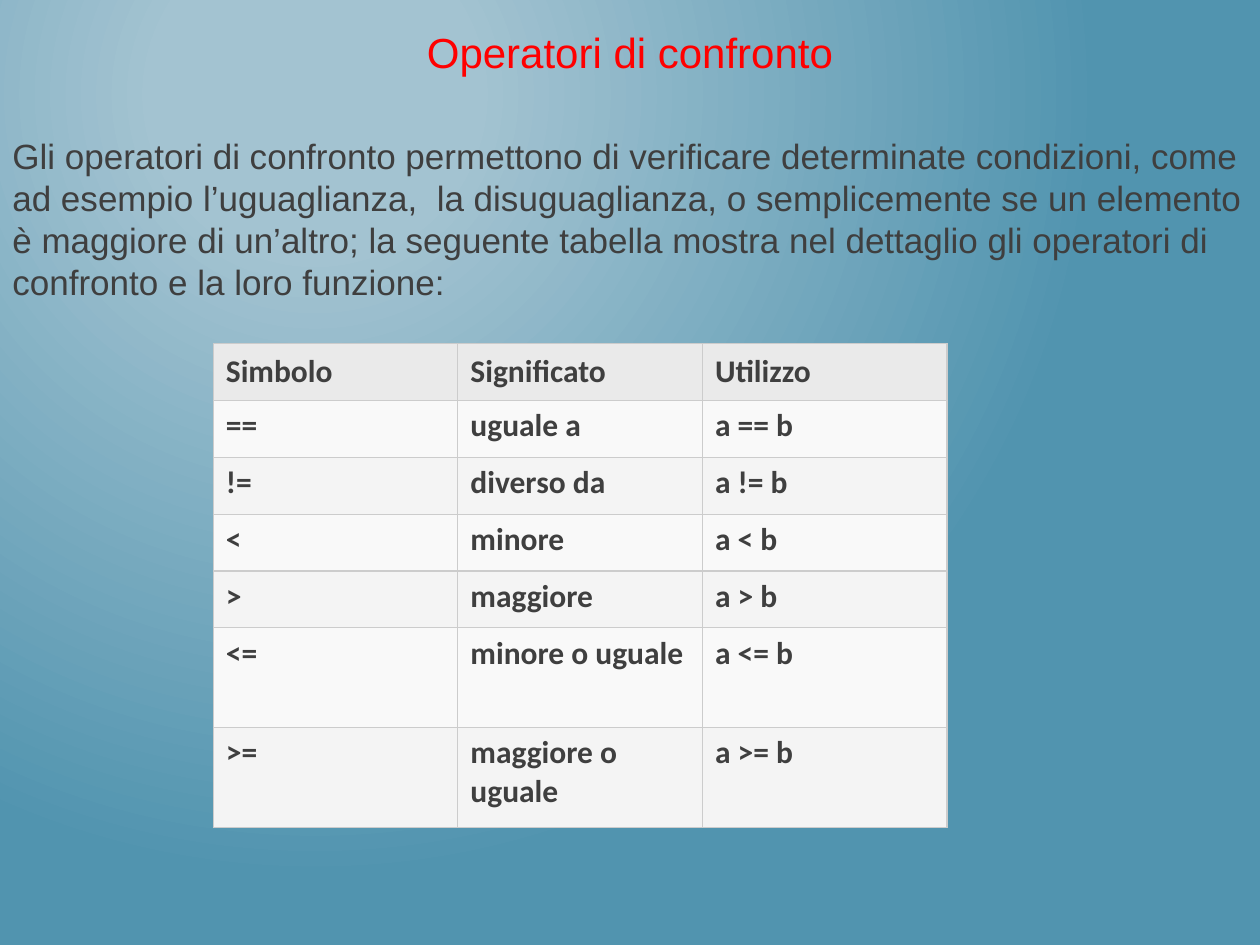
from lxml.etree import SubElement
from pptx import Presentation
from pptx.dml.color import RGBColor
from pptx.enum.text import MSO_ANCHOR as Anchor, PP_ALIGN as Align
from pptx.oxml.ns import qn
from pptx.util import Cm, Pt

COLORS = {
    "glow": "A3C3D1", "sea": "5194AF", "title": "FF0000", "text": "3F3F3F",
    "header": "EAEAEA", "odd": "F9F9F9", "even": "F4F4F4", "border": "CCCCCC",
}
TITLE = "Operatori di confronto"
INTRO = (
    "Gli operatori di confronto permettono di verificare determinate condizioni, "
    "come ad esempio l’uguaglianza,  la disuguaglianza, o semplicemente se un "
    "elemento è maggiore di un’altro; la seguente tabella mostra nel dettaglio "
    "gli operatori di confronto e la loro funzione:"
)
HEADINGS = ("Simbolo", "Significato", "Utilizzo")
MEANINGS = {
    "==": "uguale a", "!=": "diverso da", "<": "minore", ">": "maggiore",
    "<=": "minore o uguale", ">=": "maggiore o uguale",
}


def rgb(name):
    """Return the named colour."""
    return RGBColor.from_string(COLORS[name])


def write(paragraph, text, size=18, font="Arial", color="text", bold=False,
          align=Align.LEFT, before=0):
    """Write formatted text into a paragraph."""
    paragraph.alignment = align
    paragraph.space_before = Pt(before)
    run = paragraph.add_run()
    run.text = text
    run.font.size = Pt(size)
    run.font.name = font
    run.font.bold = bold
    run.font.color.rgb = rgb(color)


def paint_background(slide):
    """Fill the background with a circular gradient."""
    fill = slide.background.fill
    fill.gradient()
    for stop, color, position in zip(fill.gradient_stops, ("glow", "sea"), (0.2, 1)):
        stop.color.rgb = rgb(color)
        stop.position = position
    gradient = slide.element.find(".//" + qn("a:gradFill"))
    gradient.remove(gradient.find(qn("a:lin")))
    circle = SubElement(gradient, qn("a:path"), path="circle")
    SubElement(circle, qn("a:fillToRect"), l="50000", t="20000", r="100000", b="100000")


def add_introduction(slide):
    """Add the title and the paragraph below it."""
    frame = slide.shapes.add_textbox(Cm(0), Cm(0.4), Cm(25.4), Cm(6.93)).text_frame
    frame.word_wrap = True
    write(frame.paragraphs[0], TITLE, size=24, color="title", align=Align.CENTER, before=4.8)
    write(frame.add_paragraph(), INTRO, size=20, before=33)


def add_borders(cell):
    """Draw a thin line on every side of a cell."""
    properties = cell._tc.get_or_add_tcPr()
    for index, side in enumerate(("lnL", "lnR", "lnT", "lnB")):
        line = properties.makeelement(qn(f"a:{side}"), {"w": str(Pt(0.75))})
        fill = SubElement(line, qn("a:solidFill"))
        SubElement(fill, qn("a:srgbClr"), val=COLORS["border"])
        properties.insert(index, line)


def add_operator_table(slide):
    """Add the table of operators with their meaning and use."""
    rows = [HEADINGS] + [(sign, name, f"a {sign} b") for sign, name in MEANINGS.items()]
    table = slide.shapes.add_table(
        len(rows), len(HEADINGS), Cm(4.3), Cm(6.93), Cm(14.8), Cm(9.75)).table
    for column in table.columns:
        column.width = Cm(4.93)
    for index, values in enumerate(rows):
        table.rows[index].height = Cm(2.01 if len(values[0]) == 2 and index > 4 else 1.146)
        shade = "header" if index == 0 else "odd" if index % 2 else "even"
        for cell, value in zip(table.rows[index].cells, values):
            cell.fill.solid()
            cell.fill.fore_color.rgb = rgb(shade)
            cell.vertical_anchor = Anchor.TOP if index else Anchor.MIDDLE
            write(cell.text_frame.paragraphs[0], value, font="Calibri", bold=True)
            add_borders(cell)


def main():
    """Build and save the slide."""
    deck = Presentation()
    deck.slide_width, deck.slide_height = Cm(25.4), Cm(19.05)
    slide = deck.slides.add_slide(deck.slide_layouts[6])
    paint_background(slide)
    add_introduction(slide)
    add_operator_table(slide)
    deck.save("out.pptx")


if __name__ == "__main__":
    main()
